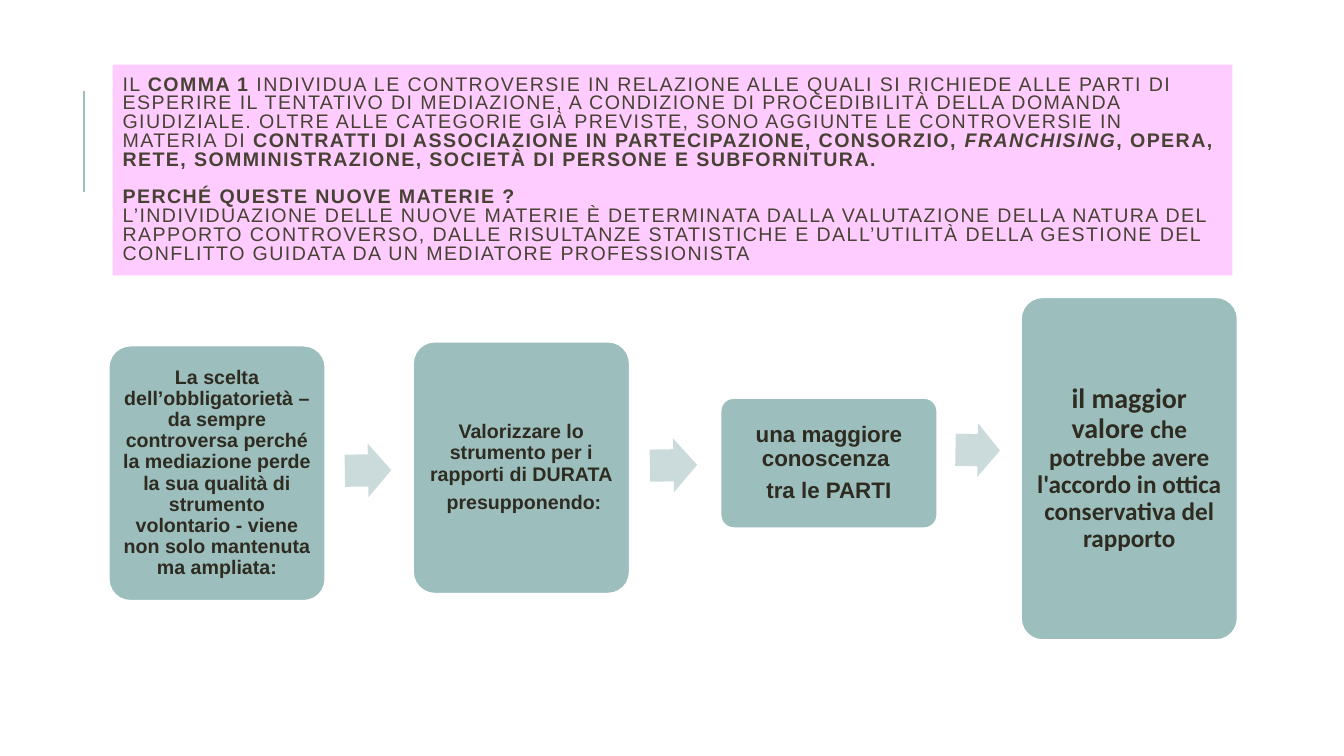
from dataclasses import dataclass, field

from lxml.etree import SubElement
from pptx import Presentation
from pptx.dml.color import RGBColor
from pptx.enum.shapes import MSO_CONNECTOR, MSO_SHAPE
from pptx.enum.text import MSO_ANCHOR, PP_ALIGN
from pptx.oxml.ns import qn
from pptx.shapes.autoshape import Shape
from pptx.slide import Slide
from pptx.util import Cm, Pt

PINK = RGBColor(0xFF, 0xCC, 0xFF)
TEAL = RGBColor(0x9C, 0xBE, 0xBD)
PALE_TEAL = RGBColor(0xCB, 0xDB, 0xDB)
WHITE = RGBColor(0xFF, 0xFF, 0xFF)
BROWN = RGBColor(0x47, 0x42, 0x33)
DARK = RGBColor(0x2E, 0x2B, 0x21)

CARD_WIDTH = 5.46
ARROW_HEIGHT = 1.35


@dataclass
class Span:
    text: str
    size: float = 14
    bold: bool = True
    italic: bool = False
    font: str = "Arial"


@dataclass
class Card:
    left: float
    top: float
    height: float
    inset: float
    paragraphs: list[list[Span]]


@dataclass
class Arrow:
    left: float
    top: float
    width: float
    rotation: float


@dataclass
class TextStyle:
    color: RGBColor
    tracking: int = 0
    paragraph: dict = field(default_factory=dict)


PREMISE = [
    [
        Span("IL ", bold=False),
        Span("COMMA 1 "),
        Span("INDIVIDUA LE CONTROVERSIE IN RELAZIONE ALLE QUALI SI RICHIEDE ALLE PARTI DI "
             "ESPERIRE IL TENTATIVO DI MEDIAZIONE, A CONDIZIONE DI PROCEDIBILITÀ DELLA DOMANDA "
             "GIUDIZIALE. OLTRE ALLE CATEGORIE GIÀ PREVISTE, SONO AGGIUNTE LE CONTROVERSIE IN "
             "MATERIA DI ", bold=False),
        Span("CONTRATTI DI ASSOCIAZIONE IN PARTECIPAZIONE, CONSORZIO, "),
        Span("FRANCHISING", italic=True),
        Span(", OPERA, RETE, SOMMINISTRAZIONE, SOCIETÀ DI PERSONE E SUBFORNITURA."),
    ],
    [Span("PERCHÉ QUESTE NUOVE MATERIE ? ")],
    [Span("L’INDIVIDUAZIONE DELLE NUOVE MATERIE È DETERMINATA DALLA VALUTAZIONE DELLA NATURA DEL "
          "RAPPORTO CONTROVERSO, DALLE RISULTANZE STATISTICHE E DALL’UTILITÀ DELLA GESTIONE DEL "
          "CONFLITTO GUIDATA DA UN MEDIATORE PROFESSIONISTA", bold=False)],
]

CARDS = [
    Card(2.74, 8.71, 6.43, 0.15, [
        [Span("La scelta dell’obbligatorietà – da sempre controversa perché la mediazione perde "
              "la sua qualità di strumento volontario - viene non solo mantenuta ma ampliata:")],
    ]),
    Card(10.41, 8.61, 6.35, 0.15, [
        [Span("Valorizzare lo strumento per i rapporti di DURATA")],
        [Span(" presupponendo:")],
    ]),
    Card(18.16, 10.03, 3.28, 0.18, [
        [Span("una maggiore conoscenza ", 16)],
        [Span("tra le PARTI", 16)],
    ]),
    Card(25.73, 7.49, 8.64, 0.2, [
        [Span("il maggior valore ", 20, font="Calibri"),
         Span("che potrebbe avere l'accordo in ottica conservativa del rapporto", 18,
              font="Calibri")],
    ]),
]

ARROWS = [
    Arrow(8.69, 11.18, 1.17, -0.8),
    Arrow(16.38, 11.05, 1.19, -1),
    Arrow(24.08, 10.67, 1.12, 1),
]

PREMISE_STYLE = TextStyle(BROWN, 100, {"alignment": PP_ALIGN.LEFT, "line_spacing": 0.8})
CARD_STYLE = TextStyle(DARK, 0, {"alignment": PP_ALIGN.CENTER, "line_spacing": 0.9})


def apply(target: object, values: dict) -> None:
    for name, value in values.items():
        setattr(target, name, value)


def add_block(slide: Slide, kind: MSO_SHAPE, left: float, top: float, width: float,
              height: float, fill: RGBColor) -> Shape:
    block = slide.shapes.add_shape(kind, Cm(left), Cm(top), Cm(width), Cm(height))
    block.shadow.inherit = False
    block.fill.solid()
    block.fill.fore_color.rgb = fill
    block.line.fill.background()
    return block


def write(block: Shape, paragraphs: list[list[Span]], style: TextStyle) -> None:
    frame = block.text_frame
    apply(frame, {"word_wrap": True, "vertical_anchor": MSO_ANCHOR.MIDDLE})
    for index, spans in enumerate(paragraphs):
        paragraph = frame.add_paragraph() if index else frame.paragraphs[0]
        apply(paragraph, style.paragraph)
        for span in spans:
            run = paragraph.add_run()
            run.text = span.text
            apply(run.font, {"name": span.font, "size": Pt(span.size),
                             "bold": span.bold, "italic": span.italic})
            run.font.color.rgb = style.color
            if style.tracking:
                run.font._element.set("spc", str(style.tracking))


def add_accent(slide: Slide) -> None:
    accent = slide.shapes.add_connector(
        MSO_CONNECTOR.STRAIGHT, Cm(2.11), Cm(4.83), Cm(2.11), Cm(2.29))
    accent.line.color.rgb = TEAL
    accent.line.width = Pt(1.5)
    SubElement(accent._element.spPr, qn("a:effectLst"))


def add_premise(slide: Slide) -> None:
    premise = add_block(slide, MSO_SHAPE.RECTANGLE, 2.84, 1.63, 28.22, 5.31, PINK)
    write(premise, PREMISE, PREMISE_STYLE)
    premise.text_frame.paragraphs[1].space_before = Pt(13.4)


def add_card(slide: Slide, card: Card) -> None:
    block = add_block(slide, MSO_SHAPE.ROUNDED_RECTANGLE, card.left, card.top,
                      CARD_WIDTH, card.height, TEAL)
    block.adjustments[0] = 0.1
    block.line.color.rgb = WHITE
    block.line.width = Pt(1.25)
    inset = Cm(card.inset)
    apply(block.text_frame, {f"margin_{side}": inset
                             for side in ("left", "top", "right", "bottom")})
    write(block, card.paragraphs, CARD_STYLE)
    for paragraph, spans in zip(block.text_frame.paragraphs, card.paragraphs):
        paragraph.space_after = Pt(0.35 * spans[0].size)


def add_arrow(slide: Slide, arrow: Arrow) -> None:
    block = add_block(slide, MSO_SHAPE.RIGHT_ARROW, arrow.left, arrow.top,
                      arrow.width, ARROW_HEIGHT, PALE_TEAL)
    block.adjustments[0] = 0.6
    block.adjustments[1] = 0.5
    block.rotation = arrow.rotation


def main() -> None:
    """Build the slide on mandatory mediation and its new subject matters."""
    deck = Presentation()
    apply(deck, {"slide_width": Cm(33.87), "slide_height": Cm(19.05)})
    slide = deck.slides.add_slide(deck.slide_layouts[6])
    add_accent(slide)
    add_premise(slide)
    for card in CARDS:
        add_card(slide, card)
    for arrow in ARROWS:
        add_arrow(slide, arrow)
    deck.save("out.pptx")


if __name__ == "__main__":
    main()
